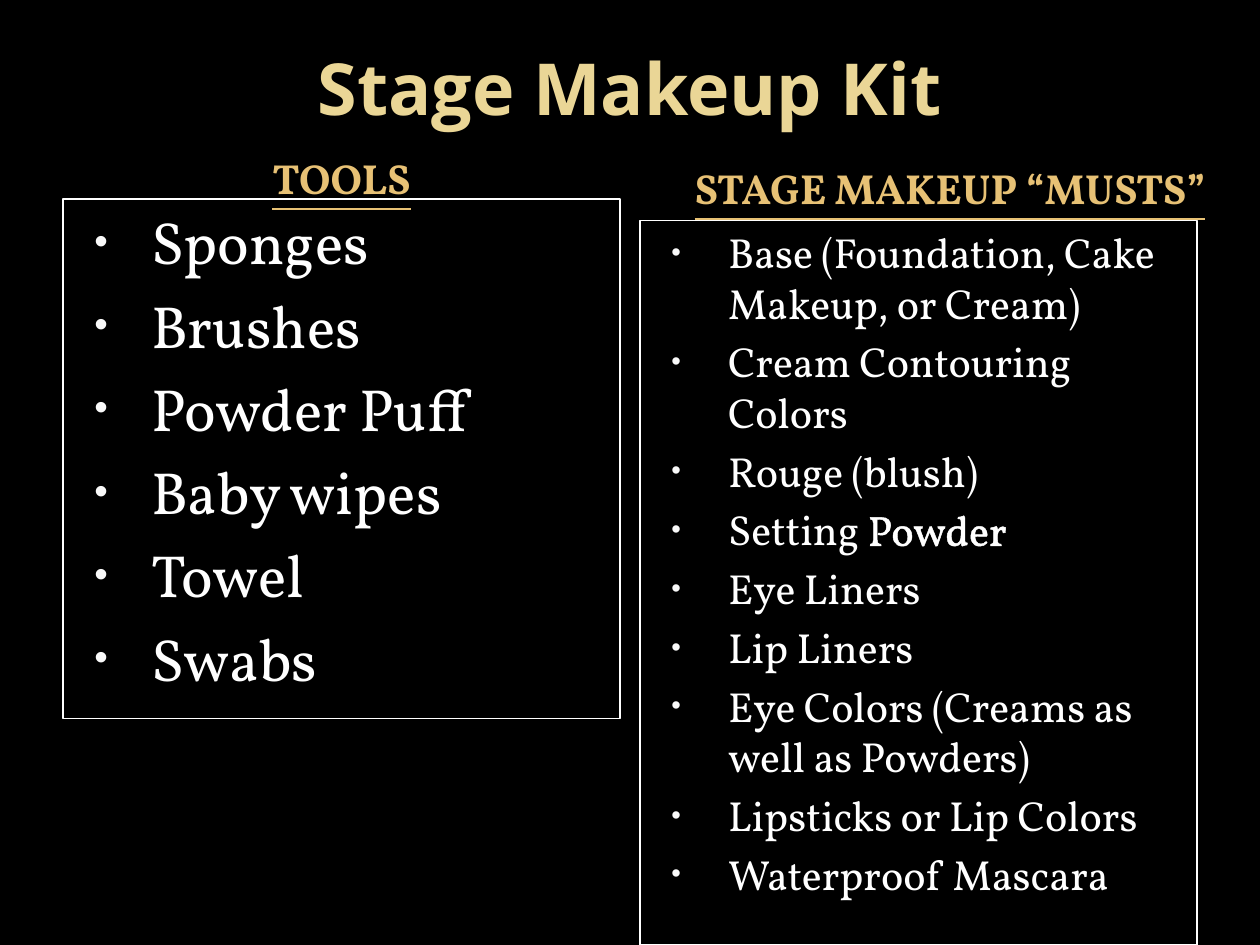
"""Build the Stage Makeup Kit slide with two bordered checklists."""
from lxml.etree import SubElement
from pptx import Presentation
from pptx.dml.color import RGBColor
from pptx.enum.shapes import MSO_SHAPE
from pptx.enum.text import MSO_ANCHOR, PP_ALIGN
from pptx.oxml.ns import qn
from pptx.util import Inches, Pt

COLORS = {"background": "000000", "title": "EAD696", "heading": "E7C175",
          "text": "FFFFFF", "bullet": "F9F9F9"}
BODY_FONT = "Vollkorn"
COLUMN_WIDTH = 4.42


def add_span(para, text, size, color, font=BODY_FONT, bold=False, underline=False):
    span = para.add_run()
    span.text = text
    span.font.name = font
    span.font.size = Pt(size)
    span.font.bold = bold
    span.font.underline = underline
    span.font.color.rgb = RGBColor.from_string(COLORS[color])
    return span


def add_bullet(para):
    properties = para._p.get_or_add_pPr()
    properties.set("marL", str(Inches(0.6)))
    properties.set("indent", str(Inches(-0.45)))
    color = SubElement(properties, qn("a:buClr"))
    SubElement(color, qn("a:srgbClr"), val=COLORS["bullet"])
    SubElement(properties, qn("a:buSzPct"), val="65000")
    SubElement(properties, qn("a:buFont"), typeface="Arial")
    SubElement(properties, qn("a:buChar"), char="•")


deck = Presentation()
deck.slide_width, deck.slide_height = Inches(10), Inches(7.5)
page = deck.slides.add_slide(deck.slide_layouts[6])
page.background.fill.solid()
page.background.fill.fore_color.rgb = RGBColor.from_string(COLORS["background"])

lists = [
    (0.5, 1.58, 4.12, 34,
     [["Sponges"], ["Brushes"], ["Powder Puff"], ["Baby wipes"], ["Towel"], ["Swabs"]]),
    (5.08, 1.75, 5.75, 24,
     [["Base (Foundation, Cake Makeup, or Cream)"], ["Cream Contouring Colors"],
      ["Rouge (blush)"], ["Setting ", "Powder"], ["Eye Liners"], ["Lip Liners"],
      ["Eye Colors (Creams as well as Powders)"], ["Lipsticks or Lip Colors"],
      ["Waterproof Mascara"]]),
]
for left, top, height, size, items in lists:
    box = page.shapes.add_shape(MSO_SHAPE.RECTANGLE, Inches(left), Inches(top),
                                Inches(COLUMN_WIDTH), Inches(height))
    box.shadow.inherit = False
    box.fill.background()
    box.line.color.rgb = RGBColor.from_string(COLORS["text"])
    box.line.width = Pt(0.75)
    frame = box.text_frame
    frame.word_wrap = True
    frame.vertical_anchor = MSO_ANCHOR.TOP
    for index, parts in enumerate(items):
        para = frame.add_paragraph() if index else frame.paragraphs[0]
        para.alignment = PP_ALIGN.LEFT
        para.space_before = Pt(size * 0.2)
        add_bullet(para)
        for part in parts:
            span = add_span(para, part, size, "text")
            if part == "Powder":
                outline = SubElement(span.font._element, qn("a:ln"), w=str(Pt(0.75)))
                fill = SubElement(outline, qn("a:solidFill"))
                SubElement(fill, qn("a:srgbClr"), val=COLORS["text"])
                span.font._element.insert(0, outline)

headings = [
    ("Stage Makeup Kit", 0.5, 0.3, 9, 0.78, 41, "title", "Open Sans", False, 0),
    ("TOOLS", 0.5, 1, COLUMN_WIDTH, 0.82, 24, "heading", BODY_FONT, True, 4.8),
    ("STAGE MAKEUP “MUSTS”", 5.08, 1.08, 4.92, 0.82, 24, "heading", BODY_FONT, True, 4.8),
]
for text, left, top, width, height, size, color, font, underline, gap in headings:
    box = page.shapes.add_textbox(Inches(left), Inches(top), Inches(width), Inches(height))
    frame = box.text_frame
    frame.word_wrap = True
    frame.vertical_anchor = MSO_ANCHOR.MIDDLE
    para = frame.paragraphs[0]
    para.alignment = PP_ALIGN.CENTER
    para.space_before = Pt(gap)
    add_span(para, text, size, color, font, True, underline)

deck.save("out.pptx")
